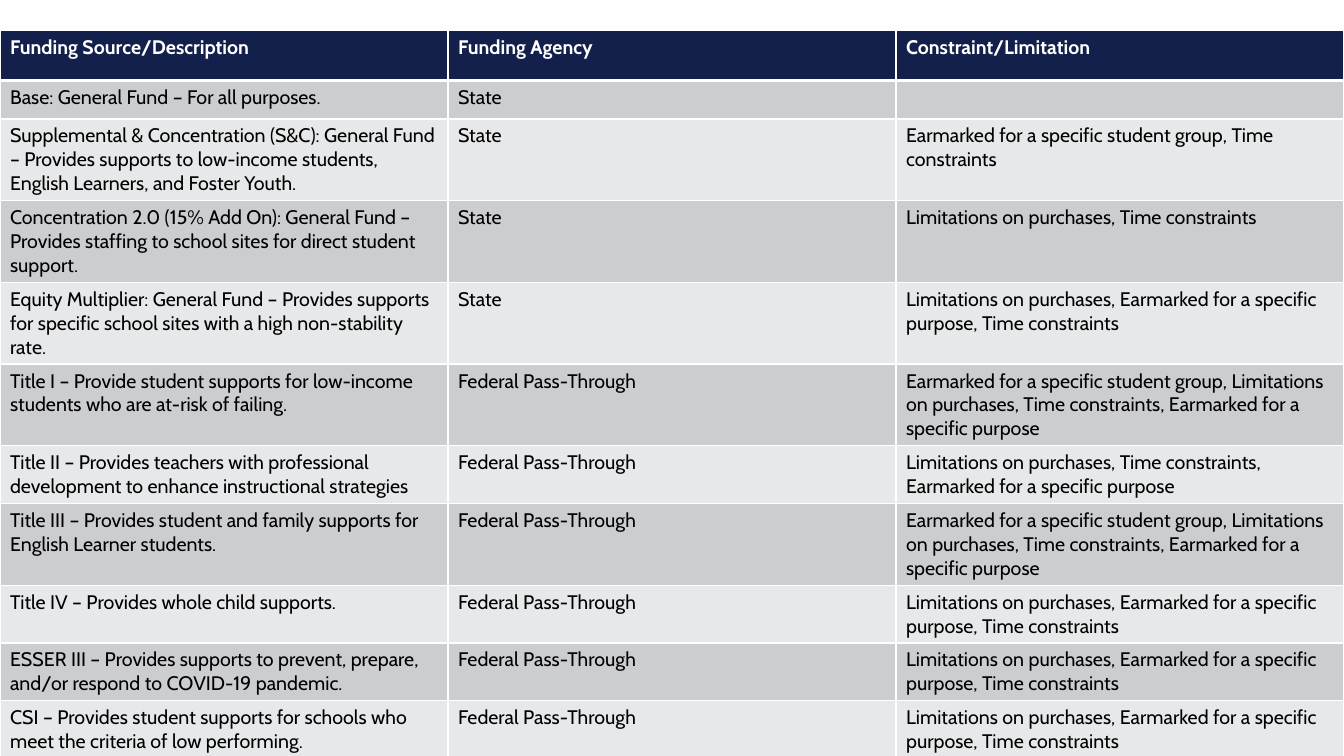
from typing import NamedTuple

from lxml import etree
from pptx import Presentation, util as u
from pptx.dml.color import RGBColor
from pptx.oxml import ns

WIDTH, HEIGHT = u.Inches(13.33), u.Inches(7.5)
COLS, ROWS = 3, 75
COL, ROW = WIDTH / COLS, HEIGHT / ROWS
TABLE_TOP, HEADER_ROWS = 3, 5

NAVY, WHITE, BLACK = "13204B", "FFFFFF", "000000"
BANDS = ("CCCDD0", "E7E8E9")

STATE, FEDERAL = "State", "Federal Pass-Through"
GROUP = "Earmarked for a specific student group"
PURPOSE = "Earmarked for a specific purpose"
PURCHASES = "Limitations on purchases"
TIME = "Time constraints"
USUAL = (PURCHASES, PURPOSE, TIME)
ALL_LIMITS = (GROUP, PURCHASES, TIME, PURPOSE)


class Fund(NamedTuple):
    rows: float
    source: str
    agency: str
    limits: tuple[str, ...] = ()


HEADINGS = ("Funding Source/Description", "Funding Agency", "Constraint/Limitation")
FUNDS = (
    Fund(3.7, "Base: General Fund – For all purposes.", STATE),
    Fund(6.9, "Supplemental & Concentration (S&C): General Fund – Provides supports to "
         "low-income students, English Learners, and Foster Youth.", STATE, (GROUP, TIME)),
    Fund(4.1, "Concentration 2.0 (15% Add On): General Fund – Provides staffing to school "
         "sites for direct student support.", STATE, (PURCHASES, TIME)),
    Fund(5.5, "Equity Multiplier: General Fund – Provides supports for specific school "
         "sites with a high non-stability rate.", STATE, USUAL),
    Fund(8, "Title I – Provide student supports for low-income students who are at-risk "
         "of failing.", FEDERAL, ALL_LIMITS),
    Fund(5.1, "Title II – Provides teachers with professional development to enhance "
         "instructional strategies", FEDERAL, (PURCHASES, TIME, PURPOSE)),
    Fund(8.1, "Title III – Provides student and family supports for English Learner "
         "students.", FEDERAL, ALL_LIMITS),
    Fund(5, "Title IV – Provides whole child supports.", FEDERAL, USUAL),
    Fund(5.1, "ESSER III – Provides supports to prevent, prepare, and/or respond to "
         "COVID-19 pandemic.", FEDERAL, USUAL),
    Fund(5.4, "CSI – Provides student supports for schools who meet the criteria of low "
         "performing.", FEDERAL, USUAL),
)


def rgb(value: str) -> RGBColor:
    return RGBColor.from_string(value)


def add_borders(cell, top: float, bottom: float) -> None:
    """Draw white cell edges; top and bottom are widths in points."""
    props = cell._tc.get_or_add_tcPr()
    edges = {"lnL": 1, "lnR": 1, "lnT": top, "lnB": bottom}
    for place, (tag, width) in enumerate(edges.items()):
        ln = etree.Element(ns.qn(f"a:{tag}"), w=str(int(u.Pt(width))))
        fill = etree.SubElement(ln, ns.qn("a:solidFill"))
        etree.SubElement(fill, ns.qn("a:srgbClr"), val=WHITE)
        props.insert(place, ln)


def write_cell(cell, words: str, fill: str, color: str, bold: bool) -> None:
    cell.fill.solid()
    cell.fill.fore_color.rgb = rgb(fill)
    r = cell.text_frame.paragraphs[0].add_run()
    r.text = words
    for name, value in {"name": "Cabin", "size": u.Pt(14), "bold": bold}.items():
        setattr(r.font, name, value)
    r.font.color.rgb = rgb(color)


def add_funding_table(slide) -> None:
    heights = [HEADER_ROWS] + [fund.rows for fund in FUNDS]
    table = slide.shapes.add_table(
        len(heights), COLS, 0, int(TABLE_TOP * ROW), WIDTH, int(sum(heights) * ROW)
    ).table
    for column in table.columns:
        column.width = int(COL)
    lines = [HEADINGS] + [(f.source, f.agency, ", ".join(f.limits)) for f in FUNDS]
    for i, (height, line) in enumerate(zip(heights, lines)):
        table.rows[i].height = int(height * ROW)
        header = i == 0
        fill = NAVY if header else BANDS[(i - 1) % 2]
        for j, words in enumerate(line):
            cell = table.cell(i, j)
            write_cell(cell, words, fill, WHITE if header else BLACK, header)
            add_borders(cell, top=3 if i == 1 else 1, bottom=3 if header else 1)


def main() -> None:
    prs = Presentation()
    prs.slide_width, prs.slide_height = WIDTH, HEIGHT
    slide = prs.slides.add_slide(prs.slide_layouts[6])
    add_funding_table(slide)
    prs.save("out.pptx")


if __name__ == "__main__":
    main()
